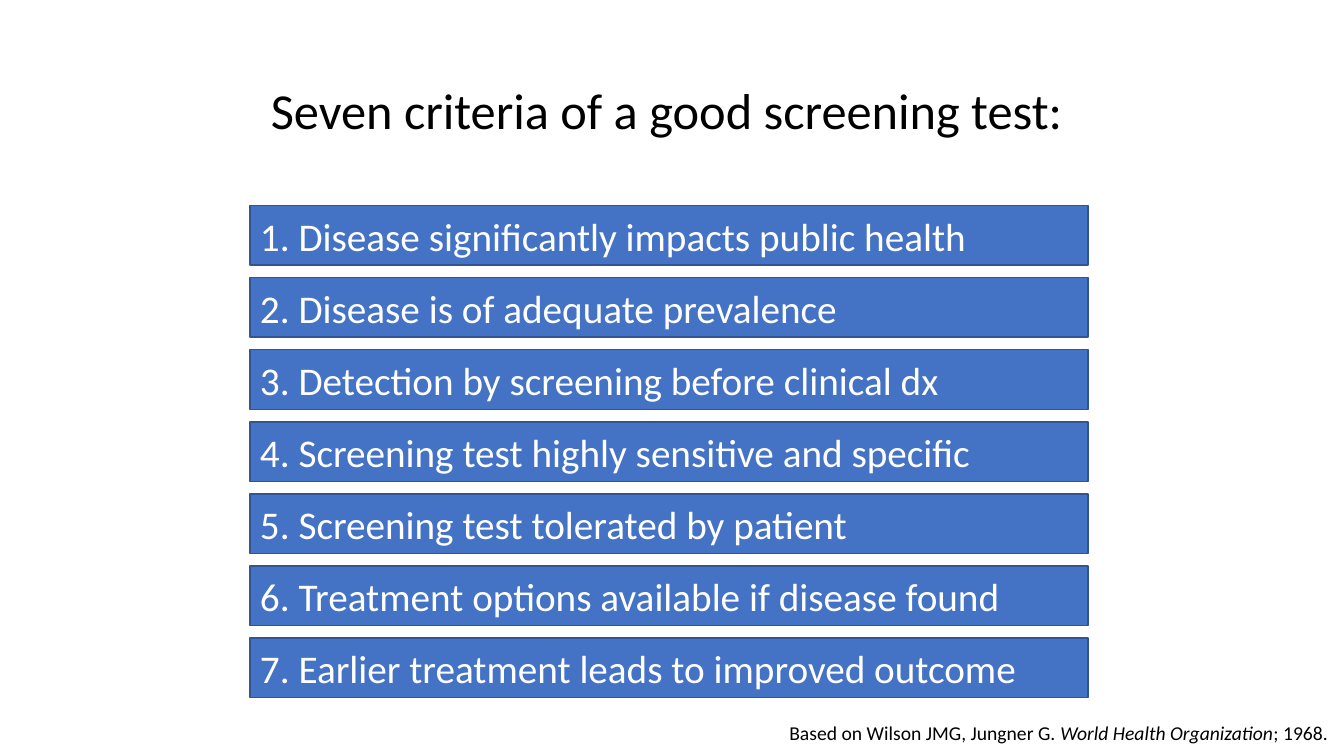
from pptx import Presentation
from pptx.dml.color import RGBColor
from pptx.enum.shapes import MSO_SHAPE
from pptx.enum.text import MSO_ANCHOR, PP_ALIGN
from pptx.util import Inches, Pt

RECTANGLE = MSO_SHAPE.RECTANGLE
TOP, MIDDLE = MSO_ANCHOR.TOP, MSO_ANCHOR.MIDDLE
LEFT, CENTER = PP_ALIGN.LEFT, PP_ALIGN.CENTER

FONT = "Calibri"
COLORS = {"text": "000000", "bar": "4472C4", "bar_line": "325491", "bar_text": "FFFFFF"}
CRITERIA = [
    "Disease significantly impacts public health",
    "Disease is of adequate prevalence",
    "Detection by screening before clinical dx",
    "Screening test highly sensitive and specific",
    "Screening test tolerated by patient",
    "Treatment options available if disease found",
    "Earlier treatment leads to improved outcome",
]


def color(name):
    return RGBColor.from_string(COLORS[name])


def write_text(shape, runs, size, text_color="text", align=LEFT, anchor=TOP, spacing=1.0):
    """Fill the shape with one paragraph of (text, italic) runs."""
    frame = shape.text_frame
    frame.word_wrap = True
    frame.vertical_anchor = anchor
    paragraph = frame.paragraphs[0]
    paragraph.alignment = align
    paragraph.line_spacing = spacing
    for text, italic in runs:
        run = paragraph.add_run()
        run.text = text
        run.font.name = FONT
        run.font.size = Pt(size)
        run.font.italic = italic
        run.font.color.rgb = color(text_color)


def add_text(slide, box, runs, size, **text_format):
    shape = slide.shapes.add_textbox(*map(Inches, box))
    write_text(shape, runs, size, **text_format)


def add_bar(slide, box, text):
    bar = slide.shapes.add_shape(RECTANGLE, *map(Inches, box))
    bar.shadow.inherit = False
    bar.fill.solid()
    bar.fill.fore_color.rgb = color("bar")
    bar.line.color.rgb = color("bar_line")
    bar.line.width = Pt(1)
    write_text(bar, [(text, False)], 28, text_color="bar_text", anchor=MIDDLE)


def add_criteria(slide, box, bar_height=0.59):
    """Stack the numbered bars at equal gaps so that they fill the box."""
    left, top, width, height = box
    pitch = (height - bar_height) / (len(CRITERIA) - 1)
    for index, criterion in enumerate(CRITERIA):
        bar_box = (left, top + index * pitch, width, bar_height)
        add_bar(slide, bar_box, f"{index + 1}. {criterion}")


def main():
    presentation = Presentation()
    presentation.slide_width = Inches(13.33)
    presentation.slide_height = Inches(7.5)
    slide = presentation.slides.add_slide(presentation.slide_layouts[6])

    add_text(slide, (0.92, 0.4, 11.5, 1.45),
             [("Seven criteria of a good screening test: ", False)],
             36, align=CENTER, anchor=MIDDLE, spacing=0.9)
    add_criteria(slide, (2.48, 2.04, 8.31, 4.88))
    add_text(slide, (7.73, 7.1, 5.6, 0.34),
             [("Based on Wilson JMG, Jungner G. ", False),
              ("World Health Organization", True),
              ("; 1968.", False)], 14)
    presentation.save("out.pptx")


if __name__ == "__main__":
    main()
